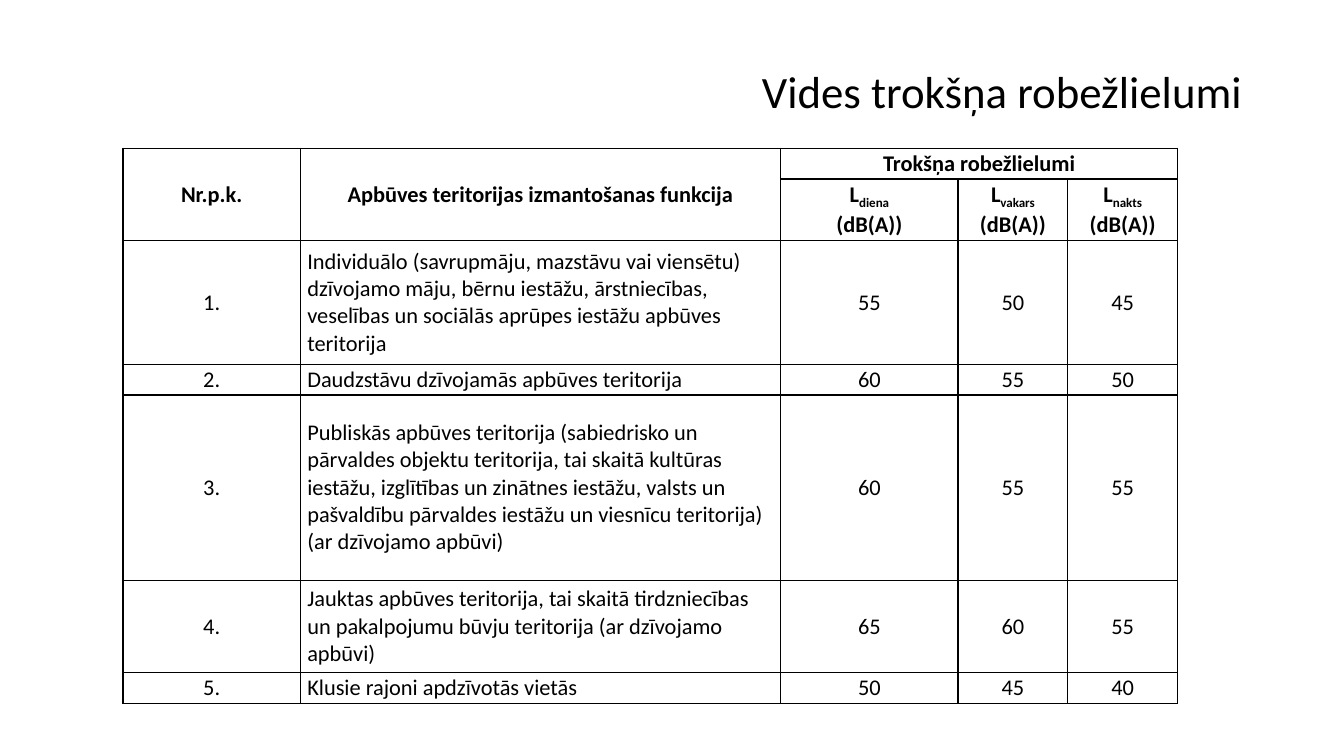
from dataclasses import dataclass

from lxml.etree import SubElement
from pptx import Presentation
from pptx.dml.color import RGBColor
from pptx.enum.text import MSO_ANCHOR, PP_ALIGN
from pptx.oxml import parse_xml
from pptx.oxml.ns import nsdecls, qn
from pptx.util import Inches, Pt


@dataclass(frozen=True)
class Theme:
    font: str = "Calibri"
    ink: str = "000000"
    title: int = 32
    body: int = 16
    rule: int = 1
    pad: float = 0.07
    sub: int = -25000


class Board:
    """Holds the theme and the current slide; places are shares of its size."""

    def __init__(self, deck, theme):
        self.theme = theme
        self.wide, self.high = deck.slide_width, deck.slide_height
        self.slide = deck.slides.add_slide(deck.slide_layouts[6])

    def box(self, x, y, w, h):
        return (round(x * self.wide), round(y * self.high),
                round(w * self.wide), round(h * self.high))

    def words(self, para, runs, size, align, bold=False):
        """Add (text, is_sub) runs to a paragraph."""
        para.alignment = align
        for text, sub in runs:
            run = para.add_run()
            run.text = text
            font = run.font
            font.name, font.size, font.bold = self.theme.font, Pt(size), bold
            font.color.rgb = RGBColor.from_string(self.theme.ink)
            if sub:
                run._r.get_or_add_rPr().set("baseline", str(self.theme.sub))

    def title(self, text, *place):
        frame = self.slide.shapes.add_textbox(*self.box(*place)).text_frame
        frame.word_wrap = True
        frame.vertical_anchor = MSO_ANCHOR.MIDDLE
        para = frame.paragraphs[0]
        para.line_spacing = 0.9
        self.words(para, [(text, False)], self.theme.title, PP_ALIGN.RIGHT)

    def table(self, cols, rows, *place):
        """Add a ruled table; cols and rows are relative sizes."""
        x, y, w, h = self.box(*place)
        grid = self.slide.shapes.add_table(len(rows), len(cols), x, y, w, h).table
        grid.first_row = grid.horz_banding = False
        for col, part in zip(grid.columns, cols):
            col.width = round(w * part / sum(cols))
        for row, part in zip(grid.rows, rows):
            row.height = round(h * part / sum(rows))
            for cell in row.cells:
                self.frame(cell)
        return grid

    def frame(self, cell):
        """Set a cell's margins, empty fill and borders."""
        cell.margin_left = cell.margin_right = Inches(self.theme.pad)
        cell.margin_top = cell.margin_bottom = 0
        cell.vertical_anchor = MSO_ANCHOR.MIDDLE
        cell.fill.background()
        props = cell._tc.get_or_add_tcPr()
        for spot, side in enumerate("LRTB"):
            line = parse_xml(f'<a:ln{side} {nsdecls("a")} w="{Pt(self.theme.rule)}"/>')
            fill = SubElement(line, qn("a:solidFill"))
            SubElement(fill, qn("a:srgbClr")).set("val", self.theme.ink)
            props.insert(spot, line)

    def fill(self, cell, lines, align=PP_ALIGN.CENTER, bold=False):
        """Set one paragraph for each list of runs."""
        frame = cell.text_frame
        for spot, runs in enumerate(lines):
            para = frame.add_paragraph() if spot else frame.paragraphs[0]
            self.words(para, runs, self.theme.body, align, bold)


HEADS = [  # row, column, last row, last column, text
    (0, 0, 1, 0, "Nr.p.k."),
    (0, 1, 1, 1, "Apbūves teritorijas izmantošanas funkcija"),
    (0, 2, 0, 4, "Trokšņa robežlielumi"),
]
TIMES = ["diena", "vakars", "nakts"]
ZONES = [
    ("Individuālo (savrupmāju, mazstāvu vai viensētu) dzīvojamo māju, "
     "bērnu iestāžu, ārstniecības, veselības un sociālās aprūpes iestāžu "
     "apbūves teritorija", 55, 50, 45),
    ("Daudzstāvu dzīvojamās apbūves teritorija", 60, 55, 50),
    ("Publiskās apbūves teritorija (sabiedrisko un pārvaldes objektu "
     "teritorija, tai skaitā kultūras iestāžu, izglītības un zinātnes "
     "iestāžu, valsts un pašvaldību pārvaldes iestāžu un viesnīcu "
     "teritorija) (ar dzīvojamo apbūvi)", 60, 55, 55),
    ("Jauktas apbūves teritorija, tai skaitā tirdzniecības un pakalpojumu "
     "būvju teritorija (ar dzīvojamo apbūvi)", 65, 60, 55),
    ("Klusie rajoni apdzīvotās vietās", 50, 45, 40),
]
COLS = [1.76, 4.77, 1.76, 1.09, 1.09]
ROWS = [1, 2, 4, 1, 6, 3, 1]  # heights in lines of text


def main():
    deck = Presentation()
    deck.slide_width, deck.slide_height = Inches(13.33), Inches(7.5)
    board = Board(deck, Theme())

    # Title
    board.title("Vides trokšņa robežlielumi",
                0.92 / 13.33, 0.4 / 7.5, 11.5 / 13.33, 1.07 / 7.5)

    # Table with a two-level head
    grid = board.table(COLS, ROWS,
                       1.22 / 13.33, 1.47 / 7.5, 10.46 / 13.33, 5.51 / 7.5)
    for top, left, low, right, text in HEADS:
        cell = grid.cell(top, left)
        cell.merge(grid.cell(low, right))
        board.fill(cell, [[(text, False)]], bold=True)
    for col, time in enumerate(TIMES, 2):
        lines = [[("L", False), (time, True)], [("(dB(A))", False)]]
        board.fill(grid.cell(1, col), lines, bold=True)

    # Zones and their limits
    for rank, (zone, *limits) in enumerate(ZONES, 1):
        for col, text in enumerate([f"{rank}.", zone, *limits]):
            align = PP_ALIGN.LEFT if col == 1 else PP_ALIGN.CENTER
            board.fill(grid.cell(rank + 1, col), [[(str(text), False)]], align)

    deck.save("out.pptx")


if __name__ == "__main__":
    main()
